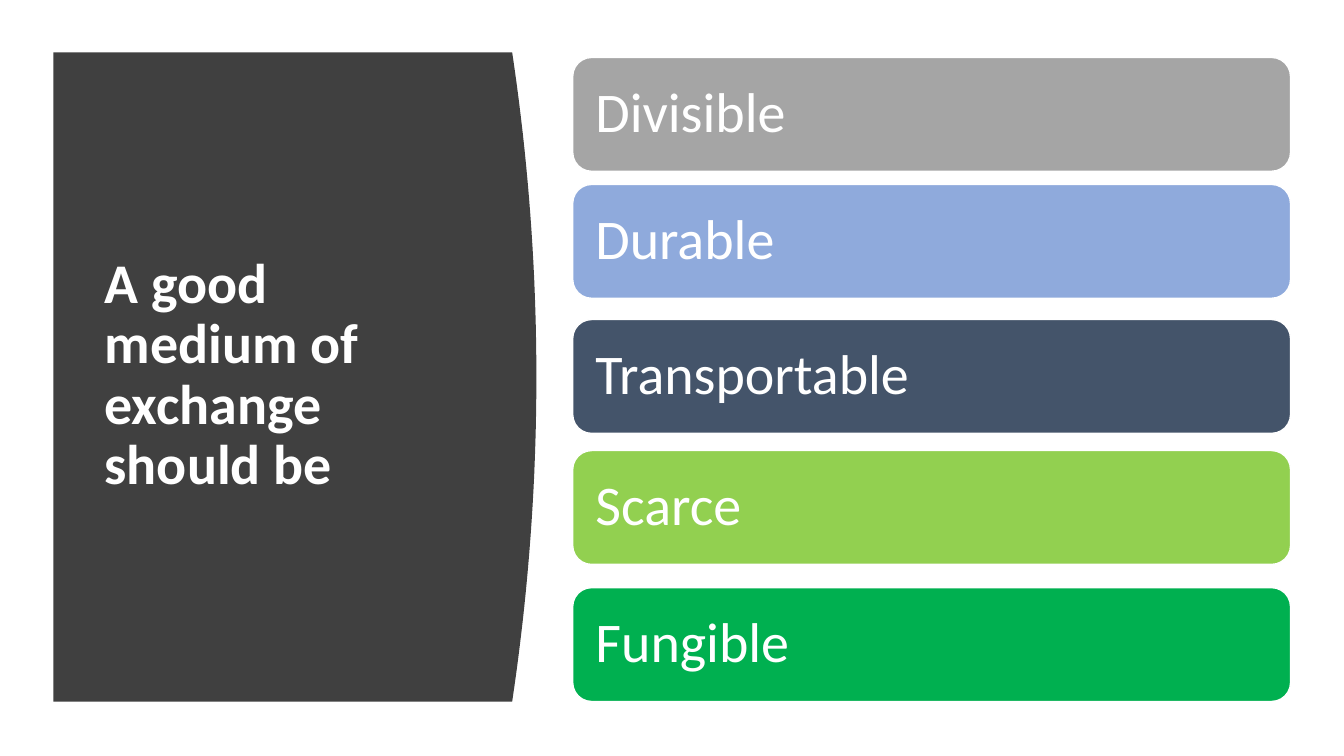
from pptx import Presentation
from pptx import util as u
from pptx.dml.color import RGBColor
from pptx.enum import shapes, text

COLORS = {
    "white": "FFFFFF", "panel": "404040", "gray": "A5A5A5", "blue": "8FAADC",
    "slate": "44546A", "lime": "92D050", "green": "00B050",
}
QUALITIES = [
    ("Divisible", "gray", 0.57),
    ("Durable", "blue", 1.83),
    ("Transportable", "slate", 3.17),
    ("Scarce", "lime", 4.47),
    ("Fungible", "green", 5.83),
]


def rgb(name):
    """Return the named colour."""
    return RGBColor.from_string(COLORS[name])


def write(sp, words, bold=False):
    """Set white, left-aligned, vertically centred text in a shape."""
    tf = sp.text_frame
    tf.word_wrap = True
    tf.vertical_anchor = text.MSO_ANCHOR.MIDDLE
    tf.text = words
    p = tf.paragraphs[0]
    p.alignment = text.PP_ALIGN.LEFT
    p.line_spacing = 0.9
    font = p.runs[0].font
    font.name, font.size, font.bold = "Calibri", u.Pt(40), bold
    font.color.rgb = rgb("white")


def add_title_panel(s, left, top, width, height, words):
    """Draw the dark panel with a bulging right side and its title."""
    bulge, steps = 0.24, 40
    side = left + width - bulge
    curve = []
    for i in range(steps + 1):
        t = i / steps
        curve.append((side + bulge * 4 * t * (1 - t), top + height * t))
    fb = s.shapes.build_freeform(u.Inches(left), u.Inches(top))
    points = curve + [(left, top + height)]
    fb.add_line_segments([(u.Inches(x), u.Inches(y)) for x, y in points])
    sp = fb.convert_to_shape()
    sp.shadow.inherit = False
    sp.fill.solid()
    sp.fill.fore_color.rgb = rgb("panel")
    sp.line.fill.background()
    box = s.shapes.add_textbox(u.Inches(left + 0.41), u.Inches(top + 0.59),
                               u.Inches(width - 1.05), u.Inches(height - 1.2))
    write(box, words, bold=True)


def add_quality(s, left, top, width, height, words, color):
    """Draw one rounded bar with its label."""
    sp = s.shapes.add_shape(shapes.MSO_SHAPE.ROUNDED_RECTANGLE, u.Inches(left),
                            u.Inches(top), u.Inches(width), u.Inches(height))
    sp.shadow.inherit = False
    sp.fill.solid()
    sp.fill.fore_color.rgb = rgb(color)
    sp.line.color.rgb = rgb("white")
    sp.line.width = u.Pt(1)
    write(sp, words)
    tf = sp.text_frame
    tf.margin_left = tf.margin_right = u.Inches(0.17)


def main():
    """Build and save the slide."""
    prs = Presentation()
    prs.slide_width, prs.slide_height = u.Inches(13.33), u.Inches(7.5)
    s = prs.slides.add_slide(prs.slide_layouts[6])
    add_title_panel(s, 0.53, 0.52, 4.79, 6.44, "A good medium of exchange should be")
    for words, color, top in QUALITIES:
        add_quality(s, 5.68, top, 7.12, 1.13, words, color)
    prs.save("out.pptx")


if __name__ == "__main__":
    main()
